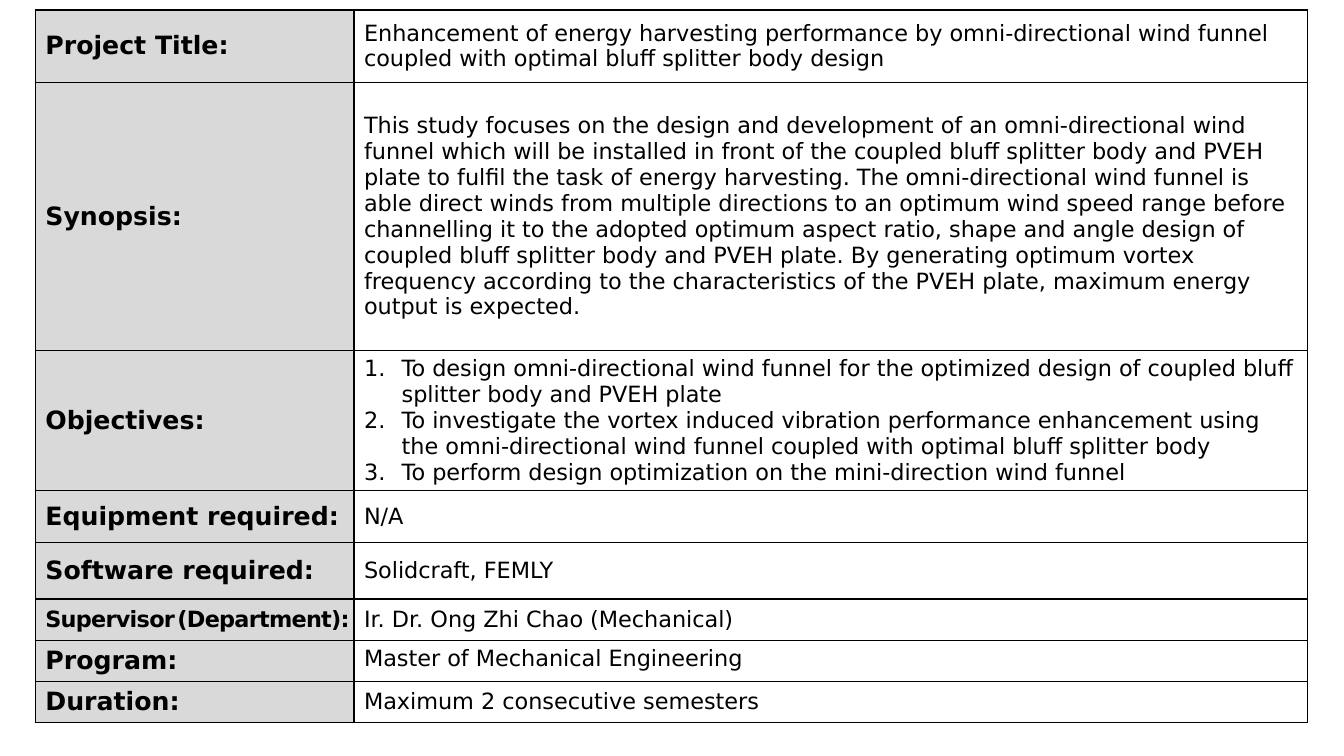
from lxml import etree
from pptx import Presentation
from pptx.dml.color import RGBColor
from pptx.enum.text import MSO_ANCHOR
from pptx.oxml.ns import qn
from pptx.util import Cm, Pt

MIDDLE, TOP = MSO_ANCHOR.MIDDLE, MSO_ANCHOR.TOP
FONT = "DejaVu Sans"
BLACK, GREY = "000000", "D9D9D9"
LABEL_SIZE, DETAIL_SIZE = 18, 16

project = [
    ("Project Title:", 1.83, [
        "Enhancement of energy harvesting performance by omni-directional wind funnel "
        "coupled with optimal bluff splitter body design"]),
    ("Synopsis:", 6.76, [
        "This study focuses on the design and development of an omni-directional wind funnel "
        "which will be installed in front of the coupled bluff splitter body and PVEH plate "
        "to fulfil the task of energy harvesting. The omni-directional wind funnel is able "
        "direct winds from multiple directions to an optimum wind speed range before "
        "channelling it to the adopted optimum aspect ratio, shape and angle design of "
        "coupled bluff splitter body and PVEH plate. By generating optimum vortex frequency "
        "according to the characteristics of the PVEH plate, maximum energy output is expected."]),
    ("Objectives:", 2.9, [
        "To design omni-directional wind funnel for the optimized design of coupled bluff "
        "splitter body and PVEH plate",
        "To investigate the vortex induced vibration performance enhancement using the "
        "omni-directional wind funnel coupled with optimal bluff splitter body",
        "To perform design optimization on the mini-direction wind funnel"]),
    ("Equipment required:", 1.32, ["N/A"]),
    ("Software required:", 1.42, ["Solidcraft, FEMLY"]),
    ("Supervisor (Department):", 1.04, ["Ir. Dr. Ong Zhi Chao (Mechanical)"]),
    ("Program:", 1.04, ["Master of Mechanical Engineering"]),
    ("Duration:", 1.04, ["Maximum 2 consecutive semesters"]),
]


def rgb(value):
    return RGBColor.from_string(value)


def fill_cell(cell, lines, size, bold):
    cell.vertical_anchor = MIDDLE
    if bold:
        cell.fill.solid()
        cell.fill.fore_color.rgb = rgb(GREY)
    else:
        cell.fill.background()
    properties = cell._tc.get_or_add_tcPr()
    for position, side in enumerate(("a:lnL", "a:lnR", "a:lnT", "a:lnB")):
        border = etree.Element(qn(side), w=str(Pt(1)))
        color = etree.SubElement(etree.SubElement(border, qn("a:solidFill")), qn("a:srgbClr"))
        color.set("val", BLACK)
        properties.insert(position, border)
    frame = cell.text_frame
    frame.text = "\n".join(lines)
    for paragraph in frame.paragraphs:
        paragraph.font.name = FONT
        paragraph.font.size = Pt(size)
        paragraph.font.bold = bold
        paragraph.font.color.rgb = rgb(BLACK)
        if len(lines) > 1:
            numbering = paragraph._p.get_or_add_pPr()
            numbering.set("marL", str(Cm(0.95)))
            numbering.set("indent", str(Cm(-0.95)))
            bullet = etree.Element(qn("a:buAutoNum"), type="arabicPeriod")
            numbering.insert(0, bullet)


prs = Presentation()
prs.slide_width, prs.slide_height = Cm(33.87), Cm(19.05)
slide = prs.slides.add_slide(prs.slide_layouts[6])

summary = slide.shapes.add_table(
    len(project), 2, Cm(0.89), Cm(0.25), Cm(32.06), Cm(17.35)).table
summary.first_row = False
summary.horz_banding = False
summary.columns[0].width = Cm(8.03)
summary.columns[1].width = Cm(24.03)

for row, (label, height, details) in enumerate(project):
    summary.rows[row].height = Cm(height)
    label_cell, detail_cell = summary.cell(row, 0), summary.cell(row, 1)
    fill_cell(label_cell, [label], LABEL_SIZE, True)
    fill_cell(detail_cell, details, DETAIL_SIZE, False)
    if label.startswith("Supervisor"):
        label_cell.margin_right = 0
        heading = label_cell.text_frame.paragraphs[0]
        heading.font.size = Pt(DETAIL_SIZE)
        role, department = label.split(" ")
        heading.runs[0].text = role
        gap = heading.add_run()
        gap.text = " "
        gap.font.size = Pt(5)
        heading.add_run().text = department
        for run in heading.runs:
            run.font._element.set("spc", "-50")
    elif label == "Program:":
        detail_cell.vertical_anchor = TOP

prs.save("out.pptx")
